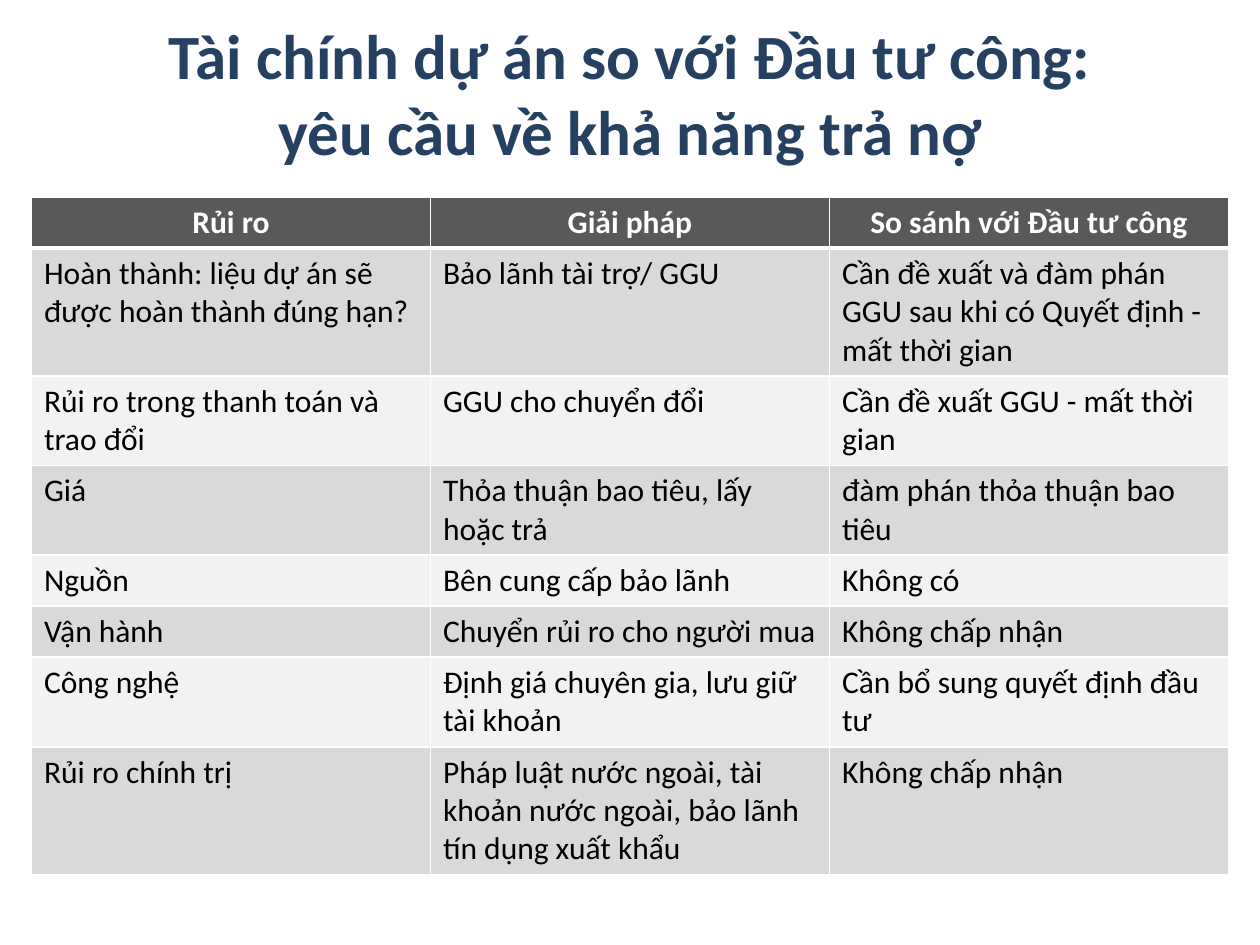
from lxml import etree
from pptx import Presentation
from pptx import util as u
from pptx.dml.color import RGBColor
from pptx.enum import text
from pptx.oxml import ns

NAVY = RGBColor(0x25, 0x40, 0x61)
WHITE = RGBColor(0xFF, 0xFF, 0xFF)
BLACK = RGBColor(0x00, 0x00, 0x00)
HEADER_GREY = RGBColor(0x59, 0x59, 0x59)
BAND_GREYS = [RGBColor(0xF2, 0xF2, 0xF2), RGBColor(0xD9, 0xD9, 0xD9)]

TITLE = "Tài chính dự án so với Đầu tư công:\nyêu cầu về khả năng trả nợ"
RISKS = [
    ("Rủi ro", "Giải pháp", "So sánh với Đầu tư công"),
    ("Hoàn thành: liệu dự án sẽ được hoàn thành đúng hạn?",
     "Bảo lãnh tài trợ/ GGU",
     "Cần đề xuất và đàm phán GGU sau khi có Quyết định - mất thời gian"),
    ("Rủi ro trong thanh toán và trao đổi",
     "GGU cho chuyển đổi",
     "Cần đề xuất GGU - mất thời gian"),
    ("Giá", "Thỏa thuận bao tiêu, lấy hoặc trả", "đàm phán thỏa thuận bao tiêu"),
    ("Nguồn", "Bên cung cấp bảo lãnh", "Không có"),
    ("Vận hành", "Chuyển rủi ro cho người mua", "Không chấp nhận"),
    ("Công nghệ", "Định giá chuyên gia, lưu giữ tài khoản",
     "Cần bổ sung quyết định đầu tư"),
    ("Rủi ro chính trị",
     "Pháp luật nước ngoài, tài khoản nước ngoài, bảo lãnh tín dụng xuất khẩu",
     "Không chấp nhận"),
]


class Deck:
    font = "Calibri"
    title_size = 36
    cell_size = 18

    def __init__(self, prs):
        self.s = prs.slides.add_slide(prs.slide_layouts[6])

    def set_text(self, tf, content, size, color, bold, centred):
        p = tf.paragraphs[0]
        p.text = content
        if centred:
            p.alignment = text.PP_ALIGN.CENTER
        for r in p.runs:
            r.font.name = self.font
            r.font.size = u.Pt(size)
            r.font.bold = bold
            r.font.color.rgb = color

    def title(self, content, x, y, w, h):
        sp = self.s.shapes.add_textbox(u.Pt(x), u.Pt(y), u.Pt(w), u.Pt(h))
        tf = sp.text_frame
        tf.word_wrap = True
        tf.auto_size = text.MSO_AUTO_SIZE.SHAPE_TO_FIT_TEXT
        self.set_text(tf, content, self.title_size, NAVY, True, True)

    def border(self, cell, side, width):
        """Draw one white cell edge; side is L, R, T or B."""
        tc_pr = cell._tc.get_or_add_tcPr()
        ln = etree.SubElement(tc_pr, ns.qn(f"a:ln{side}"), w=str(u.Pt(width)))
        fill = etree.SubElement(ln, ns.qn("a:solidFill"))
        etree.SubElement(fill, ns.qn("a:srgbClr"), val=str(WHITE))

    def table(self, rows, x, y, w, row_h):
        """Add a banded table whose first row is the header."""
        frame = self.s.shapes.add_table(len(rows), len(rows[0]), u.Pt(x), u.Pt(y),
                                        u.Pt(w), u.Pt(row_h * len(rows)))
        for i, row in enumerate(rows):
            header = i == 0
            for j, content in enumerate(row):
                cell = frame.table.cell(i, j)
                # The rule under the header is shared by rows 0 and 1.
                widths = {"L": 1, "R": 1, "T": 3 if i == 1 else 1,
                          "B": 3 if header else 1}
                for side, width in widths.items():
                    self.border(cell, side, width)
                cell.fill.solid()
                cell.fill.fore_color.rgb = HEADER_GREY if header else BAND_GREYS[i % 2]
                if header:
                    cell.vertical_anchor = text.MSO_ANCHOR.MIDDLE
                self.set_text(cell.text_frame, content, self.cell_size,
                              WHITE if header else BLACK, header, header)


def main():
    prs = Presentation()
    prs.slide_width, prs.slide_height = u.Pt(720), u.Pt(540)
    deck = Deck(prs)
    deck.table(RISKS, 18, 112.5, 684, 29.2)
    deck.title(TITLE, 12, 6, 696, 94.5)
    prs.save("out.pptx")


if __name__ == "__main__":
    main()
